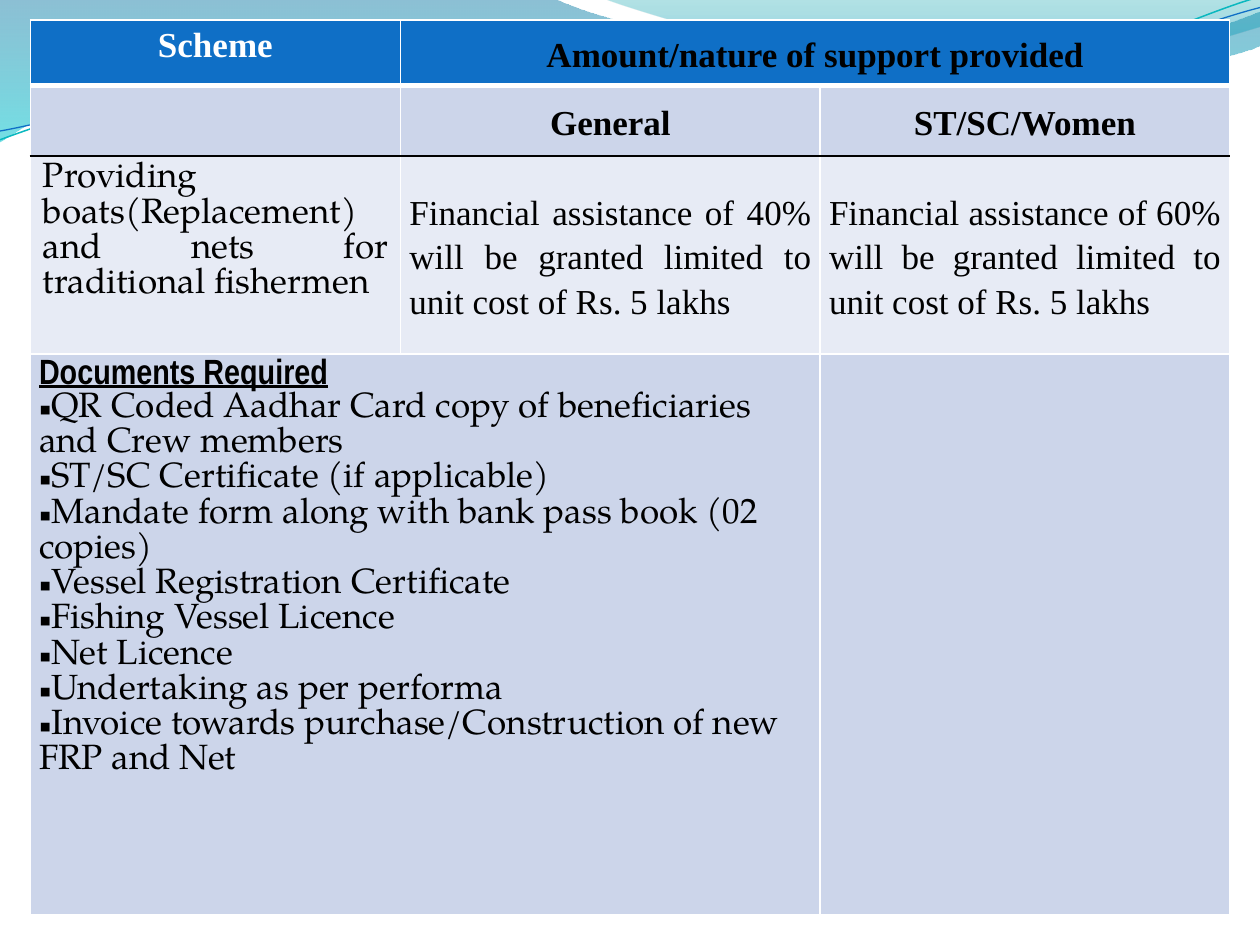
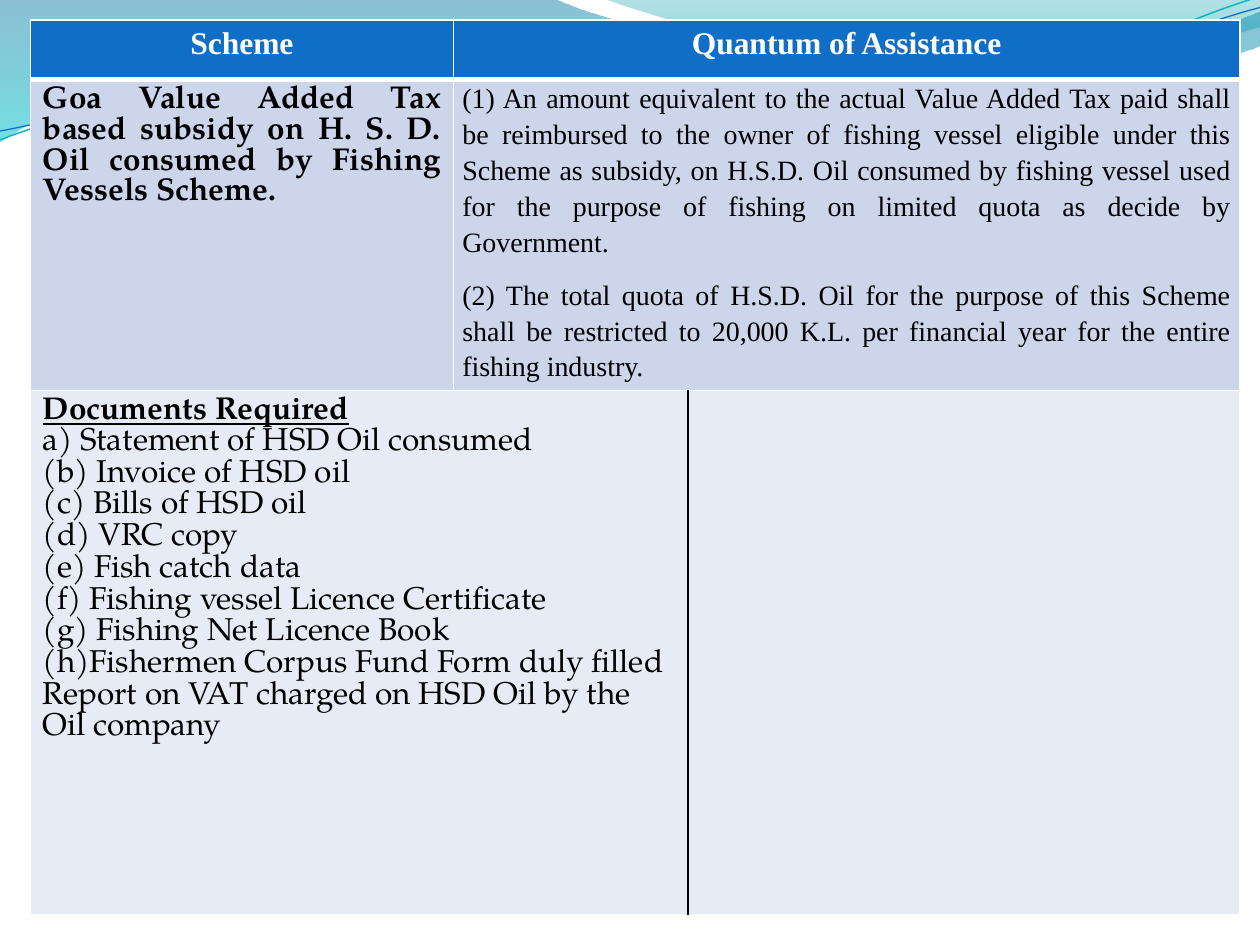
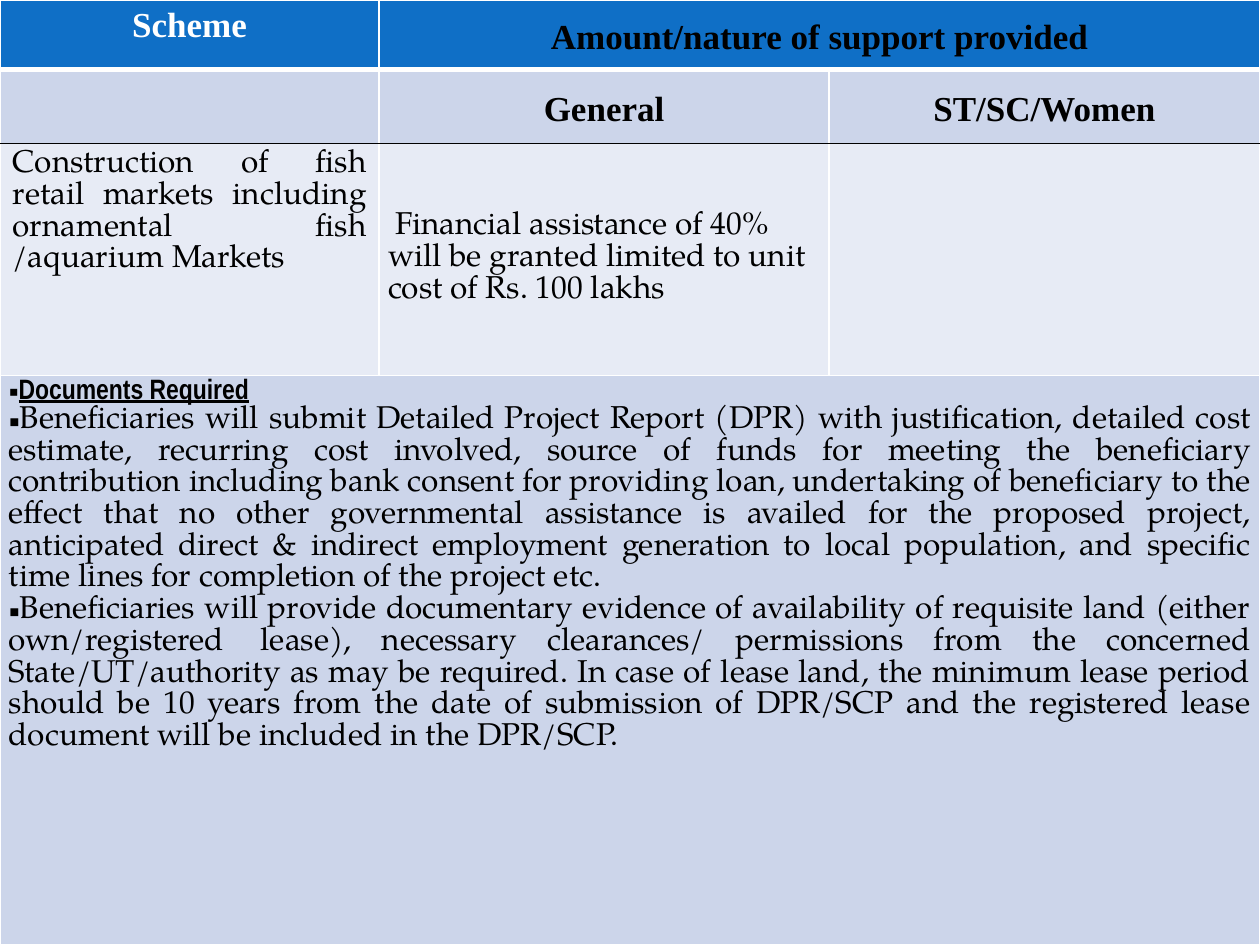
from dataclasses import dataclass, field

from lxml.etree import SubElement
from pptx import Presentation
from pptx.dml.color import RGBColor as RGB
from pptx.enum.text import MSO_ANCHOR as ANCHOR, PP_ALIGN as ALIGN
from pptx.oxml.ns import qn
from pptx.util import Inches, Pt


@dataclass(frozen=True)
class Theme:
    blue: str = "0F6FC6"
    teal: str = "0AB8BF"
    dark_band: str = "CCD5EA"
    light_band: str = "E7EBF5"
    white: str = "FFFFFF"
    black: str = "000000"
    large: int = 20
    body: int = 18
    small: int = 16
    formal: str = "Times New Roman"
    book: str = "TeX Gyre Pagella"
    narrow: str = "Arial Narrow"


THEME = Theme()
ROW_FILLS = [THEME.blue, THEME.dark_band, THEME.light_band, THEME.dark_band]
THIN_WHITE = (THEME.white, 1)
THICK_WHITE = (THEME.white, 3)
THIN_BLACK = (THEME.black, 1)

CENTERED = {"alignment": ALIGN.CENTER}
CENTERED_LOOSE = {"alignment": ALIGN.CENTER, "line_spacing": 1.15}
JUSTIFIED = {"alignment": ALIGN.JUSTIFY}
JUSTIFIED_LOOSE = {"alignment": ALIGN.JUSTIFY, "line_spacing": 1.15}
LEFT = {"alignment": ALIGN.LEFT}


@dataclass
class Line:
    text: str
    font: dict
    layout: dict = field(default_factory=lambda: LEFT)
    color: str = THEME.black
    bullet: bool = False
    indent: float = 0


@dataclass
class Cell:
    lines: list = field(default_factory=list)
    span: int = 1
    tight: bool = False
    middle: bool = False
    borders: dict = field(default_factory=dict)


def type_style(name, size, bold=False, underline=False):
    return {"name": name, "size": Pt(size), "bold": bold, "underline": underline}


HEADING = type_style(THEME.formal, THEME.large, bold=True)
BOOK_LARGE = type_style(THEME.book, THEME.large)
BOOK_BODY = type_style(THEME.book, THEME.body)


def apply(target, formats):
    for name, value in formats.items():
        setattr(target, name, value)


# Waves behind every slide

def add_outline(slide, start, steps, close):
    """Draw steps of one point (a line) or three points (a cubic curve)."""
    builder = slide.shapes.build_freeform(Inches(start[0]), Inches(start[1]), scale=1.0)
    builder.add_line_segments(
        [(Inches(x), Inches(y)) for step in steps for x, y in step], close)
    shape = builder.convert_to_shape()
    shape.shadow.inherit = False
    segments = iter(list(shape.element.iter(qn("a:lnTo"))))
    for step in steps:
        first, *others = [next(segments) for _ in step]
        if others:
            first.tag = qn("a:cubicBezTo")
        for segment in others:
            first.append(segment[0])
            segment.getparent().remove(segment)
    return shape


def add_wave(slide, start, steps, stops):
    """Fill an outline from top to bottom; a stop is position, colour, opacity in %."""
    wave = add_outline(slide, start, steps, close=True)
    wave.line.fill.background()
    wave.fill.gradient()
    wave.fill.gradient_angle = 270
    for stop, (position, color, _) in zip(wave.fill.gradient_stops, stops):
        stop.position = position
        stop.color.rgb = RGB.from_string(color)
    for tint, (_, _, opacity) in zip(wave.element.iter(qn("a:srgbClr")), stops):
        SubElement(tint, qn("a:alpha"), val=str(opacity * 1000))
    return wave


def add_ripple(slide, start, steps, color, width):
    ripple = add_outline(slide, start, steps, close=False)
    ripple.fill.background()
    ripple.line.color.rgb = RGB.from_string(color)
    ripple.line.width = Pt(width)
    return ripple


def add_master_waves(deck, slide):
    """Draw the waves on a slide, then move them to the master."""
    left_wave = [
        [(4.4, -0.01)],
        [(4.76, 0.17), (6.64, 0.63), (7.58, 0.63)],
        [(8.53, 0.63), (9.58, 0.26), (10, 0.09)],
        [(10.01, 0.36)],
        [(9.83, 0.44), (8.7, 0.76), (7.46, 0.75)],
        [(6.22, 0.75), (3.82, 0.28), (2.57, 0.34)],
        [(1.29, 0.36), (0.46, 0.83), (-0.01, 1.13)],
    ]
    right_wave = [
        [(5.09, 0.11), (6.82, 0.62), (7.69, 0.65)],
        [(8.56, 0.69), (9.61, 0.32), (10, 0.21)],
        [(10, 0)],
    ]
    teal_ripple = [
        [(0.48, 0.93), (1.58, 0.57), (2.77, 0.52)],
        [(3.95, 0.47), (5.93, 0.89), (7.13, 0.8)],
        [(8.33, 0.71), (9.38, 0.15), (9.98, -0.02)],
    ]
    blue_ripple = [
        [(0.47, 0.96), (1.64, 0.61), (2.83, 0.56)],
        [(4.03, 0.51), (5.97, 0.84), (7.17, 0.75)],
        [(8.36, 0.67), (9.41, 0.21), (10, 0.06)],
    ]
    waves = [
        add_wave(slide, (0, 0), left_wave, [(0, "0074A1", 45), (1, "00C6CF", 55)]),
        add_wave(slide, (4.79, -0.01), right_wave,
                 [(0, "00A1A9", 30), (0.8, "008BBF", 45)]),
        add_ripple(slide, (0, 1.11), teal_ripple, THEME.teal, 0.85),
        add_ripple(slide, (0, 1.04), blue_ripple, THEME.blue, 0.75),
    ]
    for wave in waves:
        deck.slide_master.shapes.element.append(wave.element)


# Tables

def set_borders(box, borders):
    properties = box._tc.get_or_add_tcPr()
    for side in "LRTB":
        color, width = borders.get(side, THIN_WHITE)
        edge = SubElement(properties, qn(f"a:ln{side}"), w=str(Pt(width)))
        paint = SubElement(edge, qn("a:solidFill"))
        SubElement(paint, qn("a:srgbClr"), val=color)


def write_line(para, line):
    apply(para, line.layout)
    properties = para._p.get_or_add_pPr()
    if line.indent:
        properties.set("indent", str(Inches(line.indent)))
    if line.bullet:
        SubElement(properties, qn("a:buFont"), typeface=THEME.formal)
        SubElement(properties, qn("a:buChar"), char="▪")
    span = para.add_run()
    span.text = line.text
    apply(span.font, line.font)
    span.font.color.rgb = RGB.from_string(line.color)


def fill_cell(box, cell, color, borders):
    set_borders(box, borders)
    box.fill.solid()
    box.fill.fore_color.rgb = RGB.from_string(color)
    if cell.tight:
        apply(box, {"margin_left": Inches(0.07), "margin_right": Inches(0.07),
                    "margin_top": 0, "margin_bottom": 0})
    if cell.middle:
        box.vertical_anchor = ANCHOR.MIDDLE
    frame = box.text_frame
    for number, line in enumerate(cell.lines):
        write_line(frame.add_paragraph() if number else frame.paragraphs[0], line)


def add_scheme_table(slide, left, top, columns, heights, rows, row_borders):
    """Fill rows of cells; row_borders maps a row number to its own edges."""
    table = slide.shapes.add_table(
        len(heights), len(columns), Inches(left), Inches(top),
        Inches(sum(columns)), Inches(sum(heights))).table
    apply(table, {"first_row": False, "horz_banding": False})
    for column, width in zip(table.columns, columns):
        column.width = Inches(width)
    for row, height in zip(table.rows, heights):
        row.height = Inches(height)
    for r, cells in enumerate(rows):
        c = 0
        for cell in cells:
            box = table.cell(r, c)
            if cell.span > 1:
                box.merge(table.cell(r, c + cell.span - 1))
            fill_cell(box, cell, ROW_FILLS[r], {**row_borders.get(r, {}), **cell.borders})
            c += cell.span


def heading_cell(text, span=1):
    return Cell([Line(text, HEADING, CENTERED_LOOSE)], span, tight=True, middle=True)


def scheme_heading(text, size, span=1):
    font = type_style(THEME.formal, size, bold=True)
    return Cell([Line(text, font, CENTERED, THEME.white)], span)


def add_support_table(slide, left, top, columns, heights, support, documents):
    rows = [
        [scheme_heading("Scheme", THEME.large),
         heading_cell("Amount/nature of support provided", span=2)],
        [Cell(), heading_cell("General"), heading_cell("ST/SC/Women")],
        support,
        documents,
    ]
    add_scheme_table(slide, left, top, columns, heights, rows,
                     {0: {"B": THICK_WHITE}, 1: {"T": THICK_WHITE, "B": THIN_BLACK},
                      2: {"T": THIN_BLACK}})


# Slides

def build_boats_slide(slide):
    formal = type_style(THEME.formal, THEME.large)
    assistance = [
        Cell([Line(f"Financial assistance of {share} will be granted limited to "
                   "unit cost of Rs. 5 lakhs", formal, JUSTIFIED_LOOSE)],
             tight=True, middle=True)
        for share in ("40%", "60%")]
    scheme = Cell([Line("Providing boats(Replacement) and nets for traditional fishermen",
                        BOOK_LARGE, JUSTIFIED)])
    title = type_style(THEME.narrow, THEME.large, bold=True, underline=True)
    documents = [
        "QR Coded Aadhar Card copy of beneficiaries and Crew members",
        "ST/SC Certificate (if applicable)",
        "Mandate form along with bank pass book (02 copies)",
        "Vessel Registration Certificate",
        "Fishing Vessel Licence",
        "Net Licence",
        "Undertaking as per performa",
        "Invoice towards purchase/Construction of new FRP and Net",
    ]
    lines = [Line("Documents Required", title, JUSTIFIED_LOOSE)]
    lines += [Line(text, BOOK_LARGE, bullet=True) for text in documents]
    add_support_table(slide, 0.24, 0.16, [2.94, 3.33, 3.25], [0.52, 0.56, 1.57, 4.45],
                      [scheme] + assistance, [Cell(lines, span=2, tight=True), Cell()])


def build_fuel_slide(slide):
    bold = type_style(THEME.book, THEME.body, bold=True)
    title = type_style(THEME.book, THEME.body, bold=True, underline=True)
    formal = type_style(THEME.formal, THEME.small)
    clauses = [
        "(1) An amount equivalent to the actual Value Added Tax paid shall be reimbursed "
        "to the owner of fishing vessel eligible under this Scheme as subsidy, on H.S.D. "
        "Oil consumed by fishing vessel used for the purpose of fishing on limited quota "
        "as decide by Government.",
        "(2) The total quota of H.S.D. Oil for the purpose of this Scheme shall be "
        "restricted to 20,000 K.L. per financial year for the entire fishing industry.",
    ]
    documents = [
        "a) Statement of HSD Oil consumed",
        "(b) Invoice of HSD oil",
        "(c) Bills of HSD oil",
        "(d) VRC copy",
        "(e) Fish catch data",
        "(f) Fishing vessel Licence Certificate",
        "(g) Fishing Net Licence Book",
        "(h)Fishermen Corpus Fund Form duly filled",
        "Report on VAT charged on HSD Oil by the Oil company",
    ]
    clause_layout = {**JUSTIFIED_LOOSE, "space_after": Pt(10)}
    scheme = Line("Goa Value Added Tax based subsidy on H. S. D. Oil consumed by "
                  "Fishing Vessels Scheme.", bold, JUSTIFIED)
    document_lines = [Line("Documents Required", title)]
    document_lines += [Line(text, BOOK_BODY) for text in documents]
    rows = [
        [scheme_heading("Scheme", THEME.body),
         scheme_heading("Quantum of Assistance", THEME.body, span=2)],
        [Cell([scheme]),
         Cell([Line(text, formal, clause_layout) for text in clauses], span=2, tight=True)],
        [Cell(document_lines, span=2, borders={"R": THIN_BLACK}),
         Cell(borders={"L": THIN_BLACK})],
    ]
    add_scheme_table(slide, 0.24, 0.16, [3.36, 1.86, 4.38], [0.47, 2.47, 4.16], rows,
                     {0: {"B": THICK_WHITE}, 1: {"T": THICK_WHITE}})


def build_markets_slide(slide):
    title = type_style(THEME.narrow, THEME.small, bold=True, underline=True)
    scheme = Cell([Line("Construction of fish retail markets including ornamental fish "
                        "/aquarium Markets", BOOK_BODY, JUSTIFIED)])
    assistance = Cell([Line("Financial assistance of 40% will be granted limited to unit "
                            "cost of Rs. 100 lakhs", BOOK_BODY, indent=0.06)],
                      tight=True, middle=True)
    documents = [
        "Beneficiaries will submit Detailed Project Report (DPR) with justification, "
        "detailed cost estimate, recurring cost involved, source of funds for meeting the "
        "beneficiary contribution including bank consent for providing loan, undertaking "
        "of beneficiary to the effect that no other governmental assistance is availed "
        "for the proposed project, anticipated direct & indirect employment generation to "
        "local population, and specific time lines for completion of the project etc.",
        "Beneficiaries will provide documentary evidence of availability of requisite land "
        "(either own/registered\tlease), necessary clearances/ permissions from the "
        "concerned State/UT/authority as may be required. In case of lease land, the "
        "minimum lease period should be 10 years from the date of submission of DPR/SCP "
        "and the registered lease document will be included in the DPR/SCP.",
    ]
    lines = [Line("Documents Required", title, JUSTIFIED_LOOSE, bullet=True)]
    lines += [Line(text, BOOK_BODY, JUSTIFIED, bullet=True) for text in documents]
    add_support_table(slide, 0, 0, [3.01, 3.57, 3.42], [0.55, 0.59, 1.84, 4.52],
                      [scheme, assistance, Cell()], [Cell(lines, span=3, tight=True)])


def main():
    deck = Presentation()
    deck.slide_width, deck.slide_height = Inches(10), Inches(7.5)
    blank = deck.slide_layouts[6]
    builders = [build_boats_slide, build_fuel_slide, build_markets_slide]
    slides = [deck.slides.add_slide(blank) for _ in builders]
    add_master_waves(deck, slides[0])
    for build, slide in zip(builders, slides):
        build(slide)
    deck.save("out.pptx")


if __name__ == "__main__":
    main()
